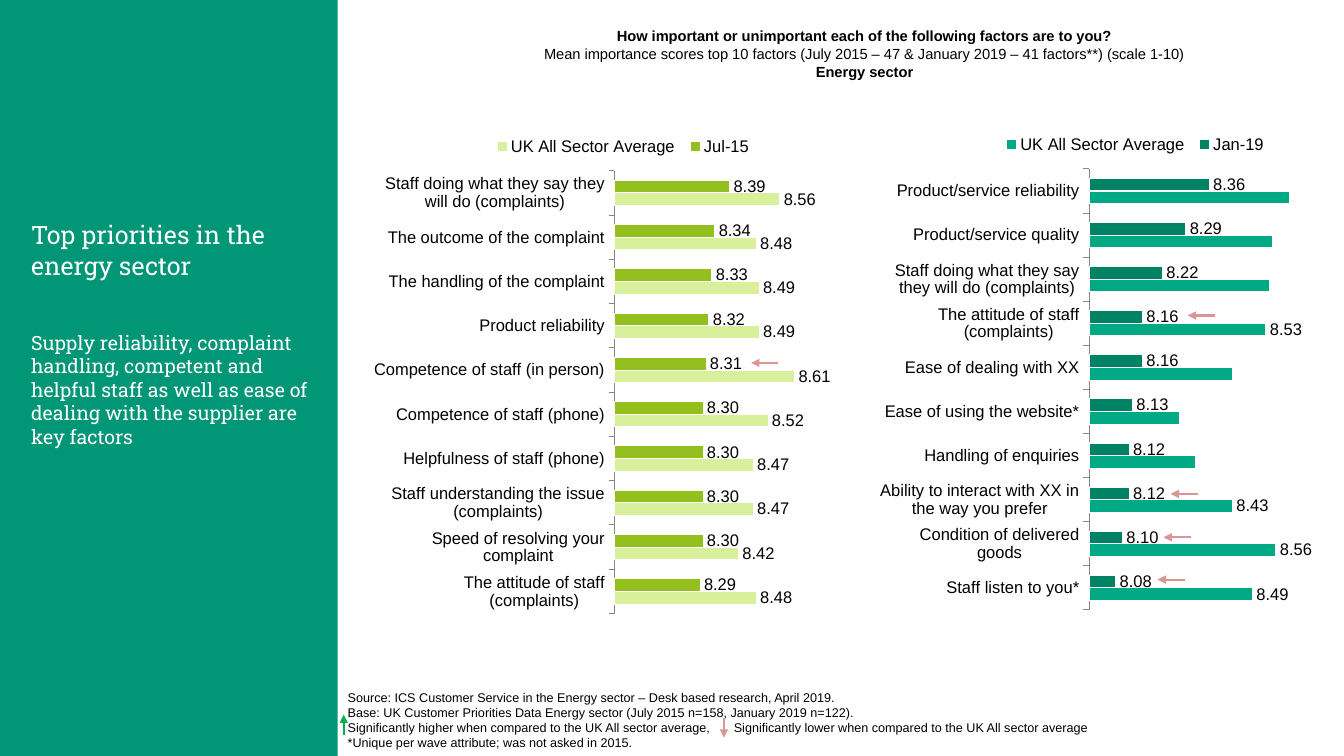
import dataclasses
import lxml.etree
import pptx
import pptx.chart.data
import pptx.dml.color
import pptx.enum.chart
import pptx.enum.shapes
import pptx.enum.text
import pptx.oxml.ns
import pptx.util

Inches = pptx.util.Inches
qn = pptx.oxml.ns.qn


@dataclasses.dataclass(frozen=True)
class Theme:
    panel: str = "009676"
    white: str = "FFFFFF"
    black: str = "000000"
    axis: str = "868686"
    lime: str = "93C01F"
    pale: str = "D8EF9C"
    deep: str = "008265"
    teal: str = "00A884"
    lower: str = "D99694"
    higher: str = "00B050"
    sans: str = "Arial"
    slab: str = "Roboto Slab"
    title: float = 18
    body: float = 14
    head: float = 10.5
    note: float = 9
    chart: float = 12


@dataclasses.dataclass
class Line:
    text: str
    size: float
    bold: bool = False
    before: float = 0


@dataclasses.dataclass
class Series:
    name: str
    color: str
    scores: list[float]
    shown: list[int] | None = None  # None labels every bar


@dataclasses.dataclass
class Chart:
    box: tuple[float, float, float, float]
    plot: tuple[float, float, float, float]
    key: tuple[float, float, float, float]
    factors: list[str]
    series: list[Series]


@dataclasses.dataclass
class Arrow:
    start: tuple[float, float]
    end: tuple[float, float]
    color: str


THEME = Theme()
AVERAGE = "UK All Sector Average"

PANEL = [
    Line("Top priorities in the energy sector", THEME.title),
    Line("Supply reliability, complaint handling, competent and helpful staff as well as "
         "ease of dealing with the supplier are key factors", THEME.body, before=36),
]
HEADING = [
    Line("How important or unimportant each of the following factors are to you?", THEME.head, True),
    Line("Mean importance scores top 10 factors (July 2015 – 47 & January 2019 – 41 factors**) "
         "(scale 1-10)", THEME.head),
    Line("Energy sector", THEME.head, True),
]
NOTES = [Line(text, THEME.note) for text in (
    "Source: ICS Customer Service in the Energy sector – Desk based research, April 2019.",
    "Base: UK Customer Priorities Data Energy sector (July 2015 n=158, January 2019 n=122).",
    "Significantly higher when compared to the UK All sector average,\t"
    "Significantly lower when compared to the UK All sector average",
    "*Unique per wave attribute; was not asked in 2015.",
)]
CHARTS = [
    Chart((3.71, 1.04, 4.58, 5.96), (0.511, 0.11, 0.457, 0.737), (0.23, 0.045, 0.6, 0.05),
          ["Staff doing what they say they will do (complaints)", "The outcome of the complaint",
           "The handling of the complaint", "Product reliability",
           "Competence of staff (in person)", "Competence of staff (phone)",
           "Helpfulness of staff (phone)", "Staff understanding the issue (complaints)",
           "Speed of resolving your complaint", "The attitude of staff (complaints)"],
          [Series("Jul-15", THEME.lime,
                  [8.39, 8.34, 8.33, 8.32, 8.31, 8.3, 8.3, 8.3, 8.3, 8.29]),
           Series(AVERAGE, THEME.pale,
                  [8.56, 8.48, 8.49, 8.49, 8.61, 8.52, 8.47, 8.47, 8.42, 8.48])]),
    Chart((8.73, 1.02, 4.64, 5.97), (0.437, 0.11, 0.508, 0.733), (0.237, 0.044, 0.6, 0.05),
          ["Product/service reliability", "Product/service quality",
           "Staff doing what they say they will do (complaints)",
           "The attitude of staff (complaints)", "Ease of dealing with XX",
           "Ease of using the website*", "Handling of enquiries",
           "Ability to interact with XX in the way you prefer",
           "Condition of delivered goods", "Staff listen to you*"],
          [Series("Jan-19", THEME.deep,
                  [8.36, 8.29, 8.22, 8.16, 8.16, 8.13, 8.12, 8.12, 8.1, 8.08]),
           Series(AVERAGE, THEME.teal,
                  [8.6, 8.55, 8.54, 8.53, 8.43, 8.27, 8.32, 8.43, 8.56, 8.49],
                  [3, 7, 8, 9])]),
]
# Markers beside scores that fall below the average, then the two in the notes
MARKS = [(7.72, 3.6), (12.05, 3.13), (11.88, 4.9), (11.81, 5.33), (11.75, 5.75)]
ARROWS = [Arrow((x, y), (x - 0.27, y), THEME.lower) for x, y in MARKS] + [
    Arrow((3.41, 7.29), (3.41, 7.09), THEME.higher),
    Arrow((7.18, 7.12), (7.18, 7.32), THEME.lower),
]


def rgb(color: str) -> pptx.dml.color.RGBColor:
    return pptx.dml.color.RGBColor.from_string(color)


def add_text(slide, box: tuple, lines: list[Line], face: str, color: str,
             center: bool = False, indent: float = 0, tab: float = 0) -> None:
    frame = slide.shapes.add_textbox(*map(Inches, box)).text_frame
    frame.word_wrap = True
    frame.text = "\n".join(line.text for line in lines)
    for para, line in zip(frame.paragraphs, lines):
        props = para._p.get_or_add_pPr()
        if indent:
            props.set("marL", str(Inches(indent)))
        if center:
            para.alignment = pptx.enum.text.PP_ALIGN.CENTER
        if line.before:
            para.space_before = pptx.util.Pt(line.before)
        if tab and "\t" in line.text:
            stops = lxml.etree.SubElement(props, qn("a:tabLst"))
            lxml.etree.SubElement(stops, qn("a:tab"), pos=str(Inches(tab)), algn="l")
        for run in para.runs:
            run.font.name, run.font.size = face, pptx.util.Pt(line.size)
            run.font.bold = line.bold
            run.font.color.rgb = rgb(color)


def set_layout(parent, index: int, place: tuple, inner: bool = False) -> None:
    for old in parent.findall(qn("c:layout")):
        parent.remove(old)
    layout = lxml.etree.Element(qn("c:layout"))
    manual = lxml.etree.SubElement(layout, qn("c:manualLayout"))
    items = [("layoutTarget", "inner")] if inner else []
    items += [("xMode", "edge"), ("yMode", "edge"), *zip("xywh", map(str, place))]
    for tag, value in items:
        lxml.etree.SubElement(manual, qn(f"c:{tag}"), val=value)
    parent.insert(index, layout)


def add_bars(slide, item: Chart) -> None:
    kinds = pptx.enum.chart
    data = pptx.chart.data.CategoryChartData(number_format="0.00")
    data.categories = item.factors
    for series in item.series:
        data.add_series(series.name, series.scores)
    chart = slide.shapes.add_chart(
        kinds.XL_CHART_TYPE.BAR_CLUSTERED, *map(Inches, item.box), data).chart
    chart.has_title = False
    chart.font.name, chart.font.size = THEME.sans, pptx.util.Pt(THEME.chart)
    chart.font.color.rgb = rgb(THEME.black)

    # Axes
    factors, scores = chart.category_axis, chart.value_axis
    factors.reverse_order = True
    factors.major_tick_mark = kinds.XL_TICK_MARK.OUTSIDE
    factors.format.line.color.rgb = rgb(THEME.axis)
    scores.minimum_scale, scores.maximum_scale = 8, 8.7
    scores.has_major_gridlines = False
    scores.visible = False

    # Legend and plot area
    chart.has_legend = True
    chart.legend.position = kinds.XL_LEGEND_POSITION.BOTTOM
    chart.legend.include_in_layout = False
    set_layout(chart.legend._element, 1, item.key)
    set_layout(chart._chartSpace.chart.plotArea, 0, item.plot, inner=True)

    # Bars and score labels
    plot = chart.plots[0]
    plot.gap_width, plot.overlap, plot.vary_by_categories = 150, 0, False
    for bars, series in zip(plot.series, item.series):
        bars.format.fill.solid()
        bars.format.fill.fore_color.rgb = rgb(series.color)
        bars.format.line.color.rgb = rgb(THEME.white)
        bars.format.line.width = pptx.util.Pt(0.75)
        labels = bars.data_labels
        labels.show_value = series.shown is None
        labels.number_format, labels.number_format_is_linked = "0.00", False
        if series.shown is None:
            labels.position = kinds.XL_LABEL_POSITION.OUTSIDE_END
        for index in series.shown or []:
            bars.points[index].data_label.position = kinds.XL_LABEL_POSITION.OUTSIDE_END


def add_arrow(slide, arrow: Arrow) -> None:
    link = slide.shapes.add_connector(
        pptx.enum.shapes.MSO_CONNECTOR.STRAIGHT, *map(Inches, arrow.start + arrow.end))
    link.line.color.rgb = rgb(arrow.color)
    link.line.width = pptx.util.Pt(1.5)
    lxml.etree.SubElement(link.line._get_or_add_ln(), qn("a:tailEnd"), type="triangle")
    lxml.etree.SubElement(link._element.spPr, qn("a:effectLst"))


def main() -> None:
    deck = pptx.Presentation()
    deck.slide_width, deck.slide_height = Inches(13.33), Inches(7.5)
    slide = deck.slides.add_slide(deck.slide_layouts[6])

    # Side panel
    panel = slide.shapes.add_shape(
        pptx.enum.shapes.MSO_SHAPE.RECTANGLE, 0, 0, Inches(3.35), Inches(7.5))
    panel.shadow.inherit = False
    panel.fill.solid()
    panel.fill.fore_color.rgb = rgb(THEME.panel)
    panel.line.fill.background()
    add_text(slide, (0.08, 2.13, 3.19, 2.66), PANEL, THEME.slab, THEME.white, indent=0.13)

    # Heading and notes
    add_text(slide, (4.55, 0.22, 8.05, 0.63), HEADING, THEME.sans, THEME.black, center=True)
    add_text(slide, (3.35, 6.79, 9.98, 0.71), NOTES, THEME.sans, THEME.black, tab=3.83)

    # Charts and arrows
    for item in CHARTS:
        add_bars(slide, item)
    for arrow in ARROWS:
        add_arrow(slide, arrow)
    deck.save("out.pptx")


if __name__ == "__main__":
    main()
